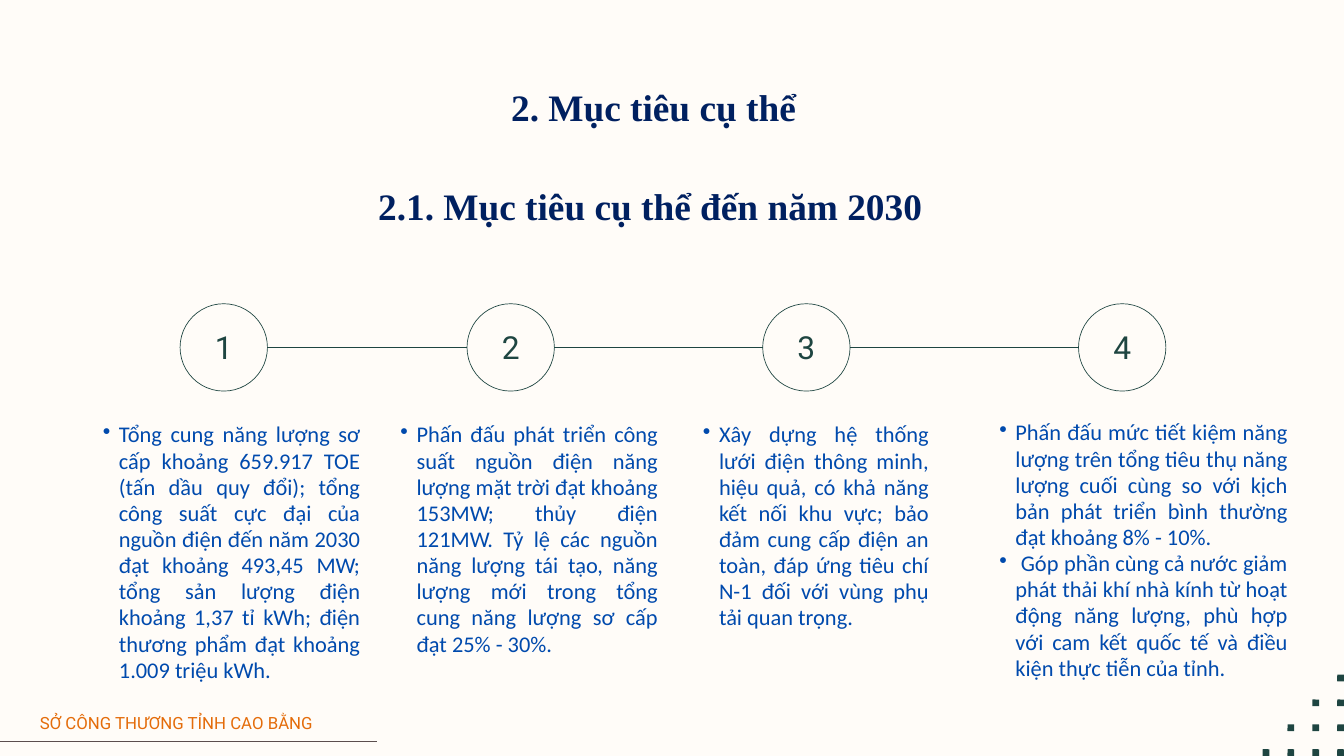
from lxml import etree
from pptx import Presentation
from pptx.dml.color import RGBColor
from pptx.enum.shapes import MSO_CONNECTOR, MSO_SHAPE
from pptx.enum.text import MSO_ANCHOR, MSO_AUTO_SIZE, PP_ALIGN
from pptx.oxml.ns import qn
from pptx.util import Emu, Pt

OVAL, ROUNDED = MSO_SHAPE.OVAL, MSO_SHAPE.ROUNDED_RECTANGLE
STRAIGHT = MSO_CONNECTOR.STRAIGHT
TOP, MIDDLE = MSO_ANCHOR.TOP, MSO_ANCHOR.MIDDLE
CENTER, JUSTIFY = PP_ALIGN.CENTER, PP_ALIGN.JUSTIFY
FIXED, GROW = MSO_AUTO_SIZE.NONE, MSO_AUTO_SIZE.SHAPE_TO_FIT_TEXT

EMU_PER_PX = 9144
CREAM, GREEN, NAVY = "FFFCF8", "1E4541", "002060"
BLUE, ORANGE, BROWN = "004AAD", "E46C0A", "5B4E4E"
CIRCLE_TOP, CIRCLE_SIZE = 452, 130
CIRCLE_LEFTS = (268, 695, 1135, 1605)
HEADING_INSETS = (10, 13, 10, 5)

GOALS = [
    ((130, 627, 406, 393), [
        "Tổng cung năng lượng sơ cấp khoảng 659.917 TOE (tấn dầu quy đổi); "
        "tổng công suất cực đại của nguồn điện đến năm 2030 đạt khoảng 493,45 MW; "
        "tổng sản lượng điện khoảng 1,37 tỉ kWh; "
        "điện thương phẩm đạt khoảng 1.009 triệu kWh. "]),
    ((573, 627, 406, 393), [
        "Phấn đấu phát triển công suất nguồn điện năng lượng mặt trời "
        "đạt khoảng 153MW; thủy điện 121MW. Tỷ lệ các nguồn năng lượng tái tạo, "
        "năng lượng mới trong tổng cung năng lượng sơ cấp đạt 25% - 30%. "]),
    ((1023, 627, 359, 314), [
        "Xây dựng hệ thống lưới điện thông minh, hiệu quả, "
        "có khả năng kết nối khu vực; bảo đảm cung cấp điện an toàn, "
        "đáp ứng tiêu chí N-1 đối với vùng phụ tải quan trọng. "]),
    ((1464, 624, 452, 393), [
        "Phấn đấu mức tiết kiệm năng lượng trên tổng tiêu thụ năng lượng cuối cùng "
        "so với kịch bản phát triển bình thường đạt khoảng 8% - 10%.",
        " Góp phần cùng cả nước giảm phát thải khí nhà kính từ hoạt động năng lượng, "
        "phù hợp với cam kết quốc tế và điều kiện thực tiễn của tỉnh. "]),
]


def px(length):
    """Turn whole pixels into EMU."""
    return Emu(length * EMU_PER_PX)


def color(value):
    """Turn a hex string into a colour."""
    return RGBColor.from_string(value)


def set_frame(shape, insets=(0, 0, 0, 0), anchor=TOP, auto_size=FIXED):
    """Prepare the text frame of a shape and return it."""
    frame = shape.text_frame
    frame.word_wrap = True
    frame.auto_size = auto_size
    frame.vertical_anchor = anchor
    (frame.margin_left, frame.margin_top,
     frame.margin_right, frame.margin_bottom) = map(px, insets)
    return frame


def set_paragraph(para, text, font_name, size, hex_color, align, spacing=None, bold=False):
    """Write one paragraph in one font."""
    para.text = text
    para.alignment = align
    if spacing:
        para.line_spacing = Pt(spacing)
    font = para.font
    font.name, font.size, font.bold = font_name, Pt(size), bold
    font.color.rgb = color(hex_color)


def add_box(slide, bounds):
    """Add a text box at the given bounds."""
    return slide.shapes.add_textbox(*map(px, bounds))


def set_heading(shape, text, align):
    """Format a shape as one of the two headings."""
    frame = set_frame(shape, HEADING_INSETS)
    set_paragraph(frame.paragraphs[0], text, "Times New Roman", 40, NAVY, align, bold=True)


def set_bullet(para):
    """Give a paragraph a hanging round bullet."""
    properties = para._p.get_or_add_pPr()
    properties.set("marL", str(px(47)))
    properties.set("indent", str(px(-24)))
    bullet_color = etree.SubElement(properties, qn("a:buClr"))
    etree.SubElement(bullet_color, qn("a:srgbClr"), val=BLUE)
    etree.SubElement(properties, qn("a:buChar"), char="•")


def add_goal(slide, bounds, texts):
    """Add a column of justified bullets."""
    frame = set_frame(add_box(slide, bounds), auto_size=GROW)
    for index, text in enumerate(texts):
        para = frame.add_paragraph() if index else frame.paragraphs[0]
        set_bullet(para)
        set_paragraph(para, text, "Calibri", 24, BLUE, JUSTIFY, 28)


def add_line(slide, left, right, y, hex_color):
    """Add a thin horizontal line."""
    line = slide.shapes.add_connector(STRAIGHT, px(left), px(y), px(right), px(y))
    line.line.color.rgb = color(hex_color)
    line.line.width = Pt(0.75)
    etree.SubElement(line._element.spPr, qn("a:effectLst"))


def add_number(slide, left, number):
    """Add an outlined circle holding a step number."""
    circle = slide.shapes.add_shape(
        OVAL, px(left), px(CIRCLE_TOP), px(CIRCLE_SIZE), px(CIRCLE_SIZE))
    circle.shadow.inherit = False
    circle.fill.background()
    circle.line.color.rgb = color(GREEN)
    circle.line.width = Pt(0.75)
    frame = set_frame(circle, (0, 0, 0, 12), MIDDLE)
    set_paragraph(frame.paragraphs[0], str(number), "Roboto", 34, GREEN, CENTER, 47.6)


def add_timeline(slide):
    """Add the numbered circles and the lines between them."""
    for number, left in enumerate(CIRCLE_LEFTS, 1):
        add_number(slide, left, number)
    for left, right in zip(CIRCLE_LEFTS, CIRCLE_LEFTS[1:]):
        add_line(slide, left + CIRCLE_SIZE, right, CIRCLE_TOP + CIRCLE_SIZE // 2, GREEN)


def add_corner_dots(slide, steps=4, size=10, pitch=37):
    """Add a staircase of small squares in the bottom right corner."""
    for row in range(steps):
        for column in range(steps - row):
            dot = slide.shapes.add_shape(
                ROUNDED, px(1990 - pitch * column), px(1115 - pitch * row), px(size), px(size))
            dot.adjustments[0] = 0.05
            dot.shadow.inherit = False
            dot.fill.solid()
            dot.fill.fore_color.rgb = color(GREEN)
            dot.line.fill.background()


def add_footer(slide):
    """Add the department name and the line under it."""
    add_line(slide, -56, 561, 1103, BROWN)
    frame = set_frame(add_box(slide, (41, 1056, 449, 33)), auto_size=GROW)
    set_paragraph(frame.paragraphs[0], "SỞ CÔNG THƯƠNG TỈNH CAO BẰNG ",
                  "Roboto", 18, ORANGE, CENTER, 25.2)


def main():
    """Build the slide and save it."""
    deck = Presentation()
    deck.slide_width, deck.slide_height = px(2000), px(1125)
    slide = deck.slides.add_slide(deck.slide_layouts[5])
    slide.background.fill.solid()
    slide.background.fill.fore_color.rgb = color(CREAM)

    title = slide.shapes.title
    title.left, title.top, title.width, title.height = map(px, (442, 112, 1075, 77))
    set_heading(title, "2. Mục tiêu cụ thể ", CENTER)
    set_heading(add_box(slide, (553, 260, 853, 77)),
                "2.1. Mục tiêu cụ thể đến năm 2030 ", JUSTIFY)
    add_timeline(slide)
    for bounds, texts in GOALS:
        add_goal(slide, bounds, texts)
    add_footer(slide)
    add_corner_dots(slide)
    deck.save("out.pptx")


if __name__ == "__main__":
    main()
